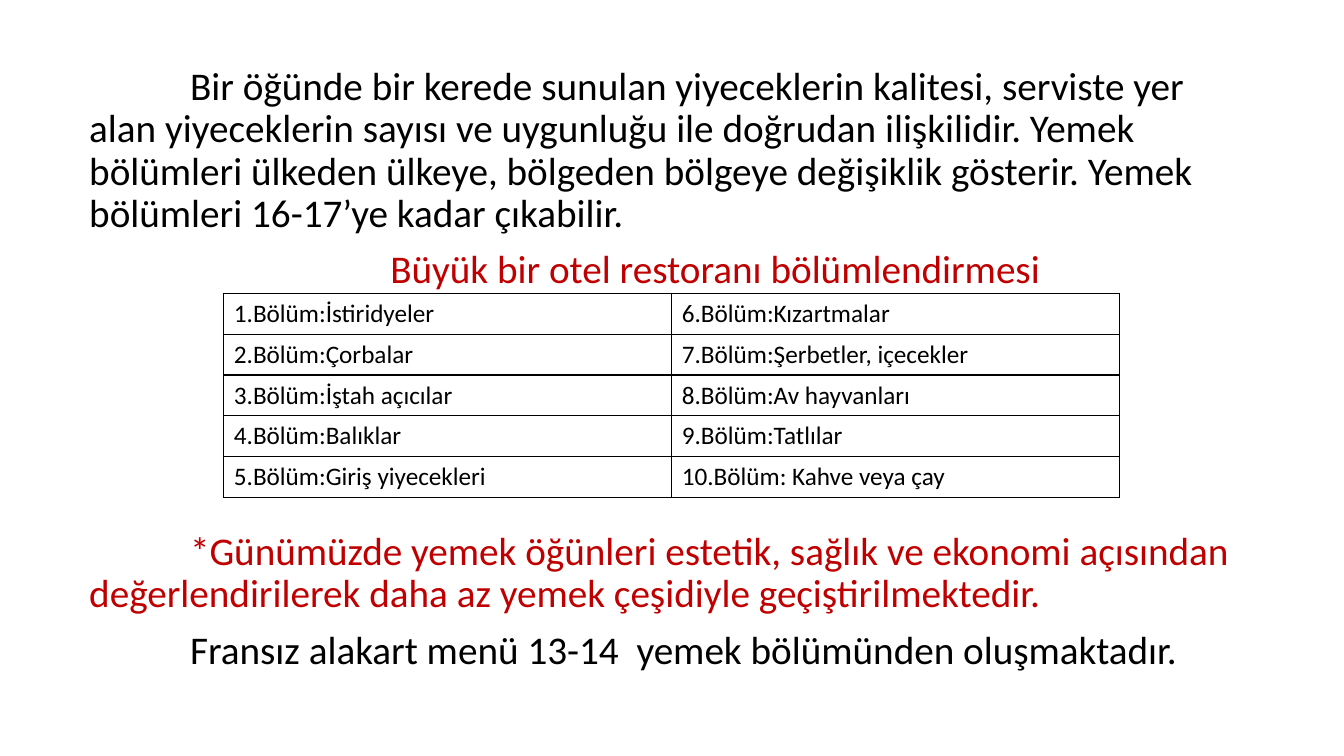
from lxml import etree
from pptx import Presentation
from pptx import util as u
from pptx.dml.color import RGBColor
from pptx.enum import text
from pptx.oxml.ns import qn

BLACK = RGBColor(0x00, 0x00, 0x00)
RED = RGBColor(0xC0, 0x00, 0x00)
FONT = "Calibri"
FIRST_LINE_INDENT = u.Cm(2.54)

INTRO = [
    ("Bir öğünde bir kerede sunulan yiyeceklerin kalitesi, serviste yer alan "
     "yiyeceklerin sayısı ve uygunluğu ile doğrudan ilişkilidir. Yemek bölümleri "
     "ülkeden ülkeye, bölgeden bölgeye değişiklik gösterir. Yemek bölümleri "
     "16-17’ye kadar çıkabilir.", BLACK, text.PP_ALIGN.LEFT),
    ("Büyük bir otel restoranı bölümlendirmesi", RED, text.PP_ALIGN.CENTER),
]
CLOSING = [
    ("*Günümüzde yemek öğünleri estetik, sağlık ve ekonomi açısından "
     "değerlendirilerek daha az yemek çeşidiyle geçiştirilmektedir.",
     RED, text.PP_ALIGN.LEFT),
    ("Fransız alakart menü 13-14  yemek bölümünden oluşmaktadır.",
     BLACK, text.PP_ALIGN.LEFT),
]
COURSES = [
    ("1.Bölüm:İstiridyeler", "6.Bölüm:Kızartmalar"),
    ("2.Bölüm:Çorbalar", "7.Bölüm:Şerbetler, içecekler"),
    ("3.Bölüm:İştah açıcılar", "8.Bölüm:Av hayvanları"),
    ("4.Bölüm:Balıklar", "9.Bölüm:Tatlılar"),
    ("5.Bölüm:Giriş yiyecekleri", "10.Bölüm: Kahve veya çay"),
]


def style_font(paragraph, size, color):
    paragraph.font.name = FONT
    paragraph.font.size = u.Pt(size)
    paragraph.font.color.rgb = color


def add_body_text(slide, entries, left, top, width, height):
    frame = slide.shapes.add_textbox(left, top, width, height).text_frame
    frame.word_wrap = True
    for index, (wording, color, alignment) in enumerate(entries):
        paragraph = frame.add_paragraph() if index else frame.paragraphs[0]
        paragraph.text = wording
        paragraph.alignment = alignment
        paragraph.line_spacing = 0.9
        if index:
            paragraph.space_before = u.Pt(10)
        # First-line indent
        properties = paragraph._p.get_or_add_pPr()
        properties.set("marL", "0")
        properties.set("indent", str(int(FIRST_LINE_INDENT)))
        style_font(paragraph, 28, color)


def add_cell_borders(cell):
    properties = cell._tc.get_or_add_tcPr()
    for side in ("a:lnL", "a:lnR", "a:lnT", "a:lnB"):
        line = etree.SubElement(properties, qn(side), w=str(int(u.Pt(1))))
        fill = etree.SubElement(line, qn("a:solidFill"))
        etree.SubElement(fill, qn("a:srgbClr"), val=str(BLACK))


def add_course_table(slide, left, top, width, height):
    table = slide.shapes.add_table(
        len(COURSES), len(COURSES[0]), left, top, width, height).table
    table.first_row = False
    table.horz_banding = False
    for row, courses in enumerate(COURSES):
        for column, course in enumerate(courses):
            cell = table.cell(row, column)
            cell.text = course
            add_cell_borders(cell)
            cell.fill.background()
            style_font(cell.text_frame.paragraphs[0], 18, BLACK)


def main():
    presentation = Presentation()
    presentation.slide_width = u.Cm(33.87)
    presentation.slide_height = u.Cm(19.05)
    slide = presentation.slides.add_slide(presentation.slide_layouts[6])

    # Introduction and table heading
    add_body_text(slide, INTRO, u.Cm(2), u.Cm(1.55), u.Cm(29.5), u.Cm(5.8))
    # Courses of the menu
    add_course_table(slide, u.Cm(5.64), u.Cm(7.39), u.Cm(22.58), u.Cm(5.15))
    # Closing remarks
    add_body_text(slide, CLOSING, u.Cm(2), u.Cm(13.27), u.Cm(29.5), u.Cm(4.8))

    presentation.save("out.pptx")


if __name__ == "__main__":
    main()
